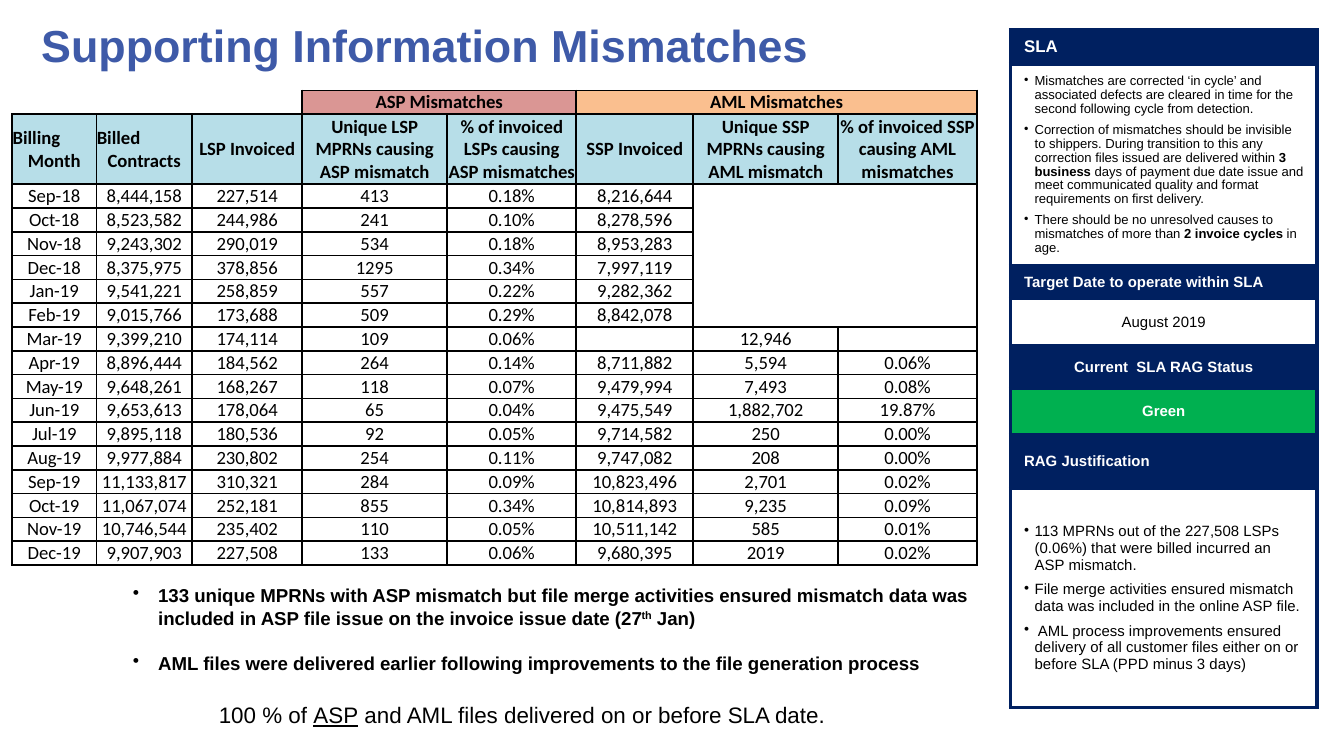
from dataclasses import dataclass
from typing import NamedTuple, Optional

from lxml import etree
from pptx import Presentation
from pptx.dml.color import RGBColor
from pptx.enum.text import MSO_ANCHOR, PP_ALIGN
from pptx.oxml.ns import qn
from pptx.util import Cm, Pt

LEFT, CENTER = PP_ALIGN.LEFT, PP_ALIGN.CENTER
TOP, MIDDLE = MSO_ANCHOR.TOP, MSO_ANCHOR.MIDDLE
BLACK = RGBColor(0x00, 0x00, 0x00)
WHITE = RGBColor(0xFF, 0xFF, 0xFF)
TITLE_BLUE = RGBColor(0x3E, 0x5A, 0xA8)
NAVY = RGBColor(0x00, 0x20, 0x60)
GREEN = RGBColor(0x00, 0xB0, 0x50)
ASP_PINK = RGBColor(0xDA, 0x96, 0x94)
AML_ORANGE = RGBColor(0xFA, 0xBF, 0x8F)
HEADER_BLUE = RGBColor(0xB7, 0xDE, 0xE8)
SIDES = ("L", "R", "T", "B")


@dataclass(frozen=True)
class Style:
    size: float
    color: RGBColor = BLACK
    bold: bool = False
    font: str = "Arial"
    align: PP_ALIGN = LEFT
    indent: float = 0  # hanging bullet indent in cm, 0 for no bullet
    before: float = 0
    after: float = 0
    spacing: Optional[float] = None


class Run(NamedTuple):
    text: str
    bold: Optional[bool] = None
    underline: Optional[bool] = None
    baseline: int = 0


class PanelRow(NamedTuple):
    height: float
    style: Style
    paragraphs: list
    fill: Optional[RGBColor] = None


class Month(NamedTuple):
    name: str
    contracts: str
    lsp_invoiced: str
    asp_mprns: str
    asp_share: str
    ssp_invoiced: str = ""
    aml_mprns: str = ""
    aml_share: str = ""


HEADING = Style(8, WHITE, True)
STATUS = Style(8, WHITE, True, align=CENTER)
SLA_BULLET = Style(7, indent=0.2, after=4, spacing=0.95)
RAG_BULLET = Style(8, indent=0.2, after=4)
GRID_HEADER = Style(10, bold=True, font="Calibri", align=CENTER)
GRID_VALUE = Style(10, font="Calibri", align=CENTER)

PANEL = [
    PanelRow(0.64, Style(9, WHITE, True), [[Run("SLA")]], NAVY),
    PanelRow(3.79, SLA_BULLET, [
        [Run("Mismatches are corrected ‘in cycle’ and associated defects are cleared "
             "in time for the second following cycle from detection.")],
        [Run("Correction of mismatches should be invisible to shippers. During transition "
             "to this any correction files issued are delivered within "),
         Run("3 business", True),
         Run(" days of payment due date issue and meet communicated quality and format "
             "requirements on first delivery.")],
        [Run("There should be no unresolved causes to mismatches of more than "),
         Run("2 invoice cycles ", True), Run("in age.")],
    ]),
    PanelRow(0.62, HEADING, [[Run("Target Date to operate within SLA")]], NAVY),
    PanelRow(0.89, Style(8, align=CENTER), [[Run("August 2019")]]),
    PanelRow(0.81, STATUS, [[Run("Current  SLA RAG Status")]], NAVY),
    PanelRow(0.87, STATUS, [[Run("Green")]], GREEN),
    PanelRow(1.02, HEADING, [[Run("RAG Justification")]], NAVY),
    PanelRow(4.14, RAG_BULLET, [
        [Run("113 MPRNs out of the 227,508 LSPs (0.06%) that were billed incurred an "
             "ASP mismatch.")],
        [Run("File merge activities ensured mismatch data was included in the online "
             "ASP file.")],
        [Run(" AML process improvements ensured delivery of all customer files either "
             "on or before SLA (PPD minus 3 days)")],
    ]),
]

COLUMN_WIDTHS = (1.59, 1.81, 2.08, 2.74, 2.44, 2.21, 2.74, 2.62)
HEADERS = (
    "Billing\nMonth", "Billed\nContracts", "LSP Invoiced",
    "Unique LSP MPRNs causing ASP mismatch", "% of invoiced LSPs causing ASP mismatches",
    "SSP Invoiced",
    "Unique SSP MPRNs causing AML mismatch", "% of invoiced SSP causing AML mismatches",
)
MONTHS = (
    Month("Sep-18", "8,444,158", "227,514", "413", "0.18%", "8,216,644"),
    Month("Oct-18", "8,523,582", "244,986", "241", "0.10%", "8,278,596"),
    Month("Nov-18", "9,243,302", "290,019", "534", "0.18%", "8,953,283"),
    Month("Dec-18", "8,375,975", "378,856", "1295", "0.34%", "7,997,119"),
    Month("Jan-19", "9,541,221", "258,859", "557", "0.22%", "9,282,362"),
    Month("Feb-19", "9,015,766", "173,688", "509", "0.29%", "8,842,078"),
    Month("Mar-19", "9,399,210", "174,114", "109", "0.06%", aml_mprns="12,946"),
    Month("Apr-19", "8,896,444", "184,562", "264", "0.14%", "8,711,882", "5,594", "0.06%"),
    Month("May-19", "9,648,261", "168,267", "118", "0.07%", "9,479,994", "7,493", "0.08%"),
    Month("Jun-19", "9,653,613", "178,064", "65", "0.04%", "9,475,549", "1,882,702", "19.87%"),
    Month("Jul-19", "9,895,118", "180,536", "92", "0.05%", "9,714,582", "250", "0.00%"),
    Month("Aug-19", "9,977,884", "230,802", "254", "0.11%", "9,747,082", "208", "0.00%"),
    Month("Sep-19", "11,133,817", "310,321", "284", "0.09%", "10,823,496", "2,701", "0.02%"),
    Month("Oct-19", "11,067,074", "252,181", "855", "0.34%", "10,814,893", "9,235", "0.09%"),
    Month("Nov-19", "10,746,544", "235,402", "110", "0.05%", "10,511,142", "585", "0.01%"),
    Month("Dec-19", "9,907,903", "227,508", "133", "0.06%", "9,680,395", "2019", "0.02%"),
)


def style_paragraph(paragraph, style: Style) -> None:
    if style.indent:
        props = paragraph._p.get_or_add_pPr()
        props.set("marL", str(Cm(style.indent)))
        props.set("indent", str(-Cm(style.indent)))
        etree.SubElement(props, qn("a:buChar")).set("char", "•")
    paragraph.alignment = style.align
    if style.before:
        paragraph.space_before = Pt(style.before)
    if style.after:
        paragraph.space_after = Pt(style.after)
    if style.spacing:
        paragraph.line_spacing = style.spacing
    font = paragraph.font
    font.name, font.size, font.bold = style.font, Pt(style.size), style.bold
    font.color.rgb = style.color


def write(frame, runs: list, style: Style, first: bool = True) -> None:
    paragraph = frame.paragraphs[0] if first else frame.add_paragraph()
    style_paragraph(paragraph, style)
    for part in runs:
        run = paragraph.add_run()
        run.text = part.text
        if part.bold is not None:
            run.font.bold = part.bold
        if part.underline is not None:
            run.font.underline = part.underline
        if part.baseline:
            run.font._element.set("baseline", str(part.baseline * 1000))


def add_text(slide, left: float, top: float, width: float, height: float, anchor=TOP):
    frame = slide.shapes.add_textbox(Cm(left), Cm(top), Cm(width), Cm(height)).text_frame
    frame.word_wrap = True
    frame.vertical_anchor = anchor
    return frame


def add_grid(slide, left: float, top: float, widths, heights):
    table = slide.shapes.add_table(len(heights), len(widths), Cm(left), Cm(top),
                                   Cm(sum(widths)), Cm(sum(heights))).table
    table.first_row = table.horz_banding = False
    for column, width in zip(table.columns, widths):
        column.width = Cm(width)
    for row, height in zip(table.rows, heights):
        row.height = Cm(height)
    return table


def format_cell(cell, line: RGBColor, weight: float, fill: Optional[RGBColor],
                sides=SIDES) -> None:
    """Draw the borders on the given sides, then the fill, which must follow them."""
    props = cell._tc.get_or_add_tcPr()
    for side in SIDES:
        border = etree.SubElement(props, qn(f"a:ln{side}"), w=str(Pt(weight)))
        if side in sides:
            solid = etree.SubElement(border, qn("a:solidFill"))
            etree.SubElement(solid, qn("a:srgbClr"), val=str(line))
        else:
            etree.SubElement(border, qn("a:noFill"))
    if fill is None:
        cell.fill.background()
    else:
        cell.fill.solid()
        cell.fill.fore_color.rgb = fill
    cell.vertical_anchor = MIDDLE


def add_panel(slide) -> None:
    table = add_grid(slide, 19.1, 0.57, [5.79], [row.height for row in PANEL])
    for index, row in enumerate(PANEL):
        cell = table.cell(index, 0)
        format_cell(cell, NAVY, 2.25, row.fill)
        cell.margin_top = cell.margin_bottom = Cm(0.08)
        for number, runs in enumerate(row.paragraphs):
            write(cell.text_frame, runs, row.style, number == 0)


def add_mismatch_table(slide) -> None:
    groups = ("", "", "", "ASP Mismatches", "", "AML Mismatches", "", "")
    group_fills = (None,) * 3 + (ASP_PINK,) * 2 + (AML_ORANGE,) * 3
    contents = (groups, HEADERS) + MONTHS
    table = add_grid(slide, 0.23, 1.71, COLUMN_WIDTHS, [0.45, 1.32] + [0.45] * len(MONTHS))
    for r, values in enumerate(contents):
        for c, value in enumerate(values):
            cell = table.cell(r, c)
            fill = group_fills[c] if r == 0 else HEADER_BLUE if r == 1 else None
            sides = SIDES if r or c > 2 else ("R", "B") if c == 2 else ("B",)
            format_cell(cell, BLACK, 1, fill, sides)
            cell.margin_left = cell.margin_right = cell.margin_top = Cm(0.01)
            cell.margin_bottom = 0
            write(cell.text_frame, [Run(value)] if value else [],
                  GRID_HEADER if r < 2 else GRID_VALUE)
            if not value:
                cell.text_frame.paragraphs[0]._p.get_or_add_endParaRPr().set("sz", "1000")
    for start, end in (((0, 3), (0, 4)), ((0, 5), (0, 7)), ((2, 6), (7, 7))):
        table.cell(*start).merge(table.cell(*end))


def main() -> None:
    deck = Presentation()
    deck.slide_width, deck.slide_height = Cm(25.4), Cm(14.29)
    slide = deck.slides.add_slide(deck.slide_layouts[6])

    title = add_text(slide, 0.53, -0.05, 23.62, 1.78, MIDDLE)
    write(title, [Run("Supporting Information Mismatches")], Style(24, TITLE_BLUE, True))
    add_panel(slide)

    delivery = add_text(slide, 2.49, 13.13, 14.76, 1.04)
    write(delivery, [Run("100 % of "), Run("ASP", underline=True),
                     Run(" and AML files delivered on or before SLA date.")],
          Style(12, align=CENTER))

    findings = add_text(slide, 2.26, 10.92, 17.55, 2.21)
    write(findings, [Run("133 unique MPRNs with ASP mismatch but file merge activities ensured "
                         "mismatch data was included in ASP file issue on the invoice issue "
                         "date (27"), Run("th", baseline=30), Run(" Jan)")],
          Style(10, bold=True, indent=0.48))
    write(findings, [Run("AML files were delivered earlier following improvements to the file "
                         "generation process")],
          Style(10, bold=True, indent=0.48, before=12), first=False)
    add_mismatch_table(slide)
    deck.save("out.pptx")


if __name__ == "__main__":
    main()
